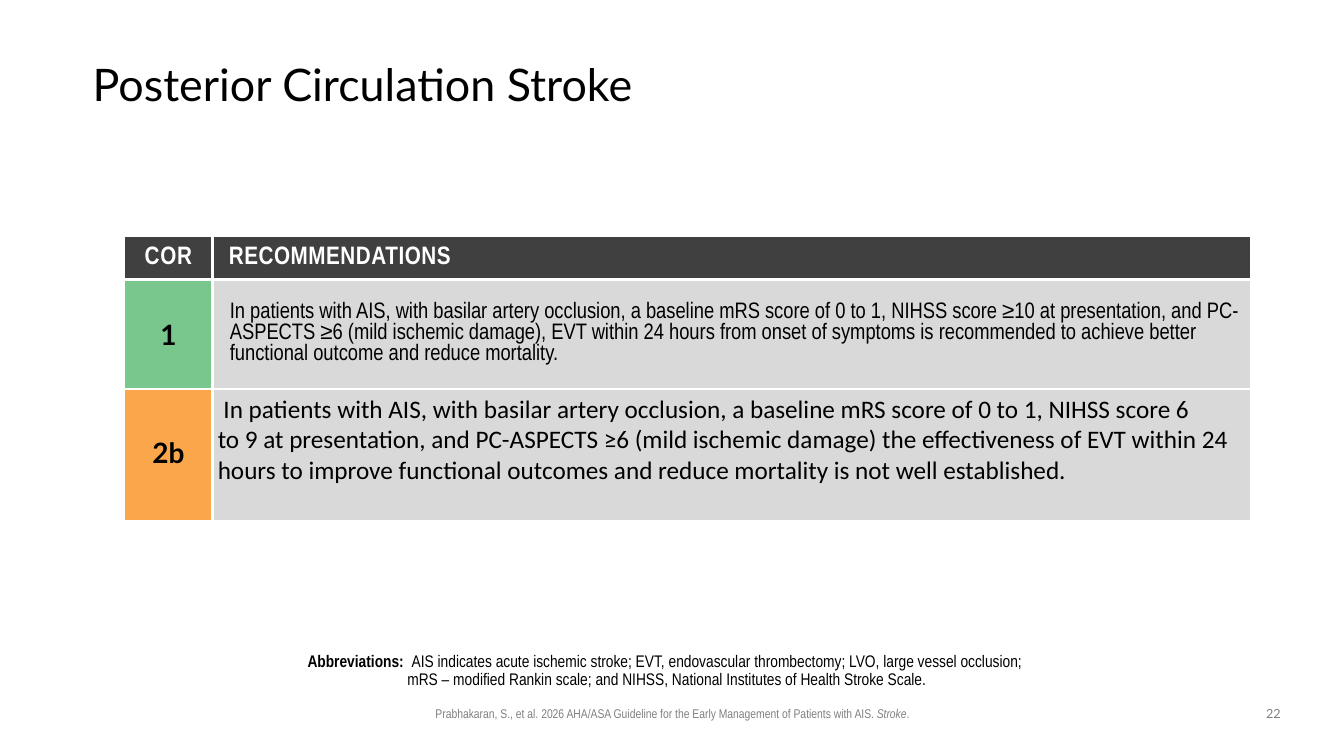
"""Build the posterior circulation stroke recommendations slide."""
from lxml.etree import SubElement
from pptx import Presentation
from pptx.dml.color import RGBColor
from pptx.enum.text import MSO_ANCHOR, PP_ALIGN
from pptx.oxml.ns import qn
from pptx.util import Inches, Pt


def add_span(para, text, font, size, color, bold=False, italic=False, spacing=0):
    span = para.add_run()
    span.text = text
    span.font.name = font
    span.font.size = Pt(size)
    span.font.bold = bold
    span.font.italic = italic
    span.font.color.rgb = RGBColor.from_string(color)
    if spacing:
        span.font._element.set("spc", str(round(spacing * 100)))


def add_box(left, top, width, height, align, anchor, margins):
    frame = page.shapes.add_textbox(*map(Inches, (left, top, width, height))).text_frame
    frame.word_wrap = True
    frame.vertical_anchor = anchor
    frame.margin_left, frame.margin_top, frame.margin_right, frame.margin_bottom = map(Inches, margins)
    para = frame.paragraphs[0]
    para.alignment = align
    return para


NARROW, LATO, CALIBRI = "Arial Narrow", "Lato", "Calibri"
BLACK, WHITE, GRAY = "000000", "FFFFFF", "808080"
DARK, LIGHT, GREEN, ORANGE = "404040", "D9D9D9", "79C78D", "FAA74B"
CENTER, LEFT = PP_ALIGN.CENTER, PP_ALIGN.LEFT
TOP, MIDDLE, BOTTOM = MSO_ANCHOR.TOP, MSO_ANCHOR.MIDDLE, MSO_ANCHOR.BOTTOM

deck = Presentation()
deck.slide_width, deck.slide_height = Inches(13.33), Inches(7.5)
page = deck.slides.add_slide(deck.slide_layouts[6])

source = add_box(2.36, 6.95, 8.62, 0.25, CENTER, TOP, (0.1, 0.05, 0.1, 0.05))
citation = "Prabhakaran, S., et al. 2026 AHA/ASA Guideline for the Early Management of Patients with AIS. "
for text, italic in [(citation, False), ("Stroke", True), (".", False)]:
    add_span(source, text, NARROW, 9, GRAY, italic=italic)

title = add_box(0.92, 0.4, 11.5, 0.92, LEFT, MIDDLE, (0, 0, 0, 0))
title.line_spacing = 0.9
add_span(title, "Posterior Circulation Stroke", LATO, 32, BLACK)

strong = [
    "In patients with AIS, with basilar artery occlusion, a baseline mRS score of 0 to 1, "
    "NIHSS score ≥10 at presentation, and PC-ASPECTS ≥6 (mild ischemic damage), EVT within "
    "24 hours from onset of symptoms is recommended to achieve better functional outcome "
    "and reduce mortality."
]
weak = [
    " In patients with AIS, with basilar artery occlusion, a baseline mRS score of 0 to 1, NIHSS score 6",
    "to 9 at presentation, and PC-ASPECTS ≥6 (mild ischemic damage) the effectiveness of EVT "
    "within 24 hours to improve functional outcomes and reduce mortality is not well established.",
]
cells = [
    [(["COR"], DARK, CENTER, MIDDLE, 0.1, 0, 1, (NARROW, 18, WHITE, True, False, 0.5)),
     (["RECOMMENDATIONS"], DARK, LEFT, MIDDLE, 0.1, 0.06, 1, (NARROW, 18, WHITE, True, False, 0.4))],
    [(["1"], GREEN, CENTER, MIDDLE, 0.05, 0, 1, (LATO, 20, BLACK, True)),
     (strong, LIGHT, LEFT, MIDDLE, 0.05, 0.12, 1, (NARROW, 16, BLACK))],
    [(["2b"], ORANGE, CENTER, MIDDLE, 0.05, 0, 0.8, (LATO, 20, BLACK, True)),
     (weak, LIGHT, LEFT, TOP, 0.05, 0, 1, (CALIBRI, 18, BLACK))],
]
widths, heights = [0.88, 10.3], [0.43, 1.09, 1.31]
table = page.shapes.add_table(
    len(heights), len(widths), Inches(1.23), Inches(2.34), Inches(sum(widths)), Inches(sum(heights))
).table
for column, width in zip(table.columns, widths):
    column.width = Inches(width)
for row, height, contents in zip(table.rows, heights, cells):
    row.height = Inches(height)
    for cell, (texts, fill, align, anchor, margin, indent, leading, style) in zip(row.cells, contents):
        cell.margin_left = cell.margin_right = Inches(margin)
        cell.margin_top = cell.margin_bottom = Inches(0.05)
        cell.vertical_anchor = anchor
        properties = cell._tc.get_or_add_tcPr()
        for side in ("lnL", "lnR", "lnT", "lnB"):
            border = SubElement(properties, qn(f"a:{side}"), w=str(Pt(2.25)))
            SubElement(SubElement(border, qn("a:solidFill")), qn("a:srgbClr"), val=WHITE)
        cell.fill.solid()
        cell.fill.fore_color.rgb = RGBColor.from_string(fill)
        for number, text in enumerate(texts):
            para = cell.text_frame.add_paragraph() if number else cell.text_frame.paragraphs[0]
            para.alignment = align
            para.line_spacing = leading
            para._p.get_or_add_pPr().set("marL", str(Inches(indent)))
            add_span(para, text, *style)

abbreviations = add_box(1.88, 6.43, 9.57, 0.46, CENTER, BOTTOM, (0, 0.05, 0.1, 0.05))
abbreviations.line_spacing = 0.9
add_span(abbreviations, "Abbreviations:  ", NARROW, 12, BLACK, bold=True)
add_span(
    abbreviations,
    "AIS indicates acute ischemic stroke; EVT, endovascular thrombectomy; LVO, large vessel occlusion; ",
    NARROW, 12, BLACK,
)
abbreviations.add_line_break()
add_span(
    abbreviations,
    "mRS – modified Rankin scale; and NIHSS, National Institutes of Health Stroke Scale.",
    NARROW, 12, BLACK,
)

page_number = add_box(12.42, 6.95, 0.42, 0.26, CENTER, TOP, (0.1, 0.05, 0.1, 0.05))
add_span(page_number, "22", LATO, 9, GRAY)

deck.save("out.pptx")
